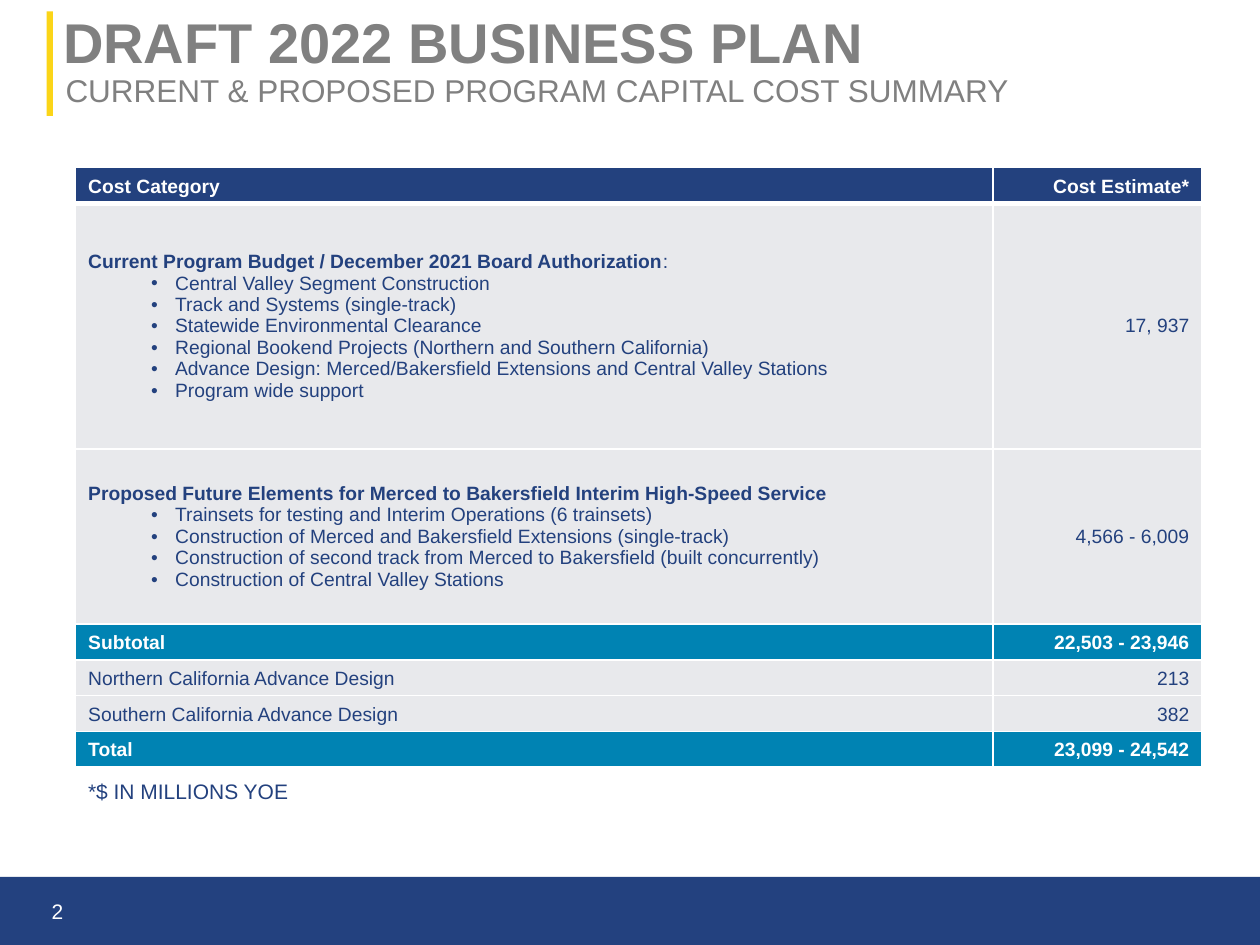
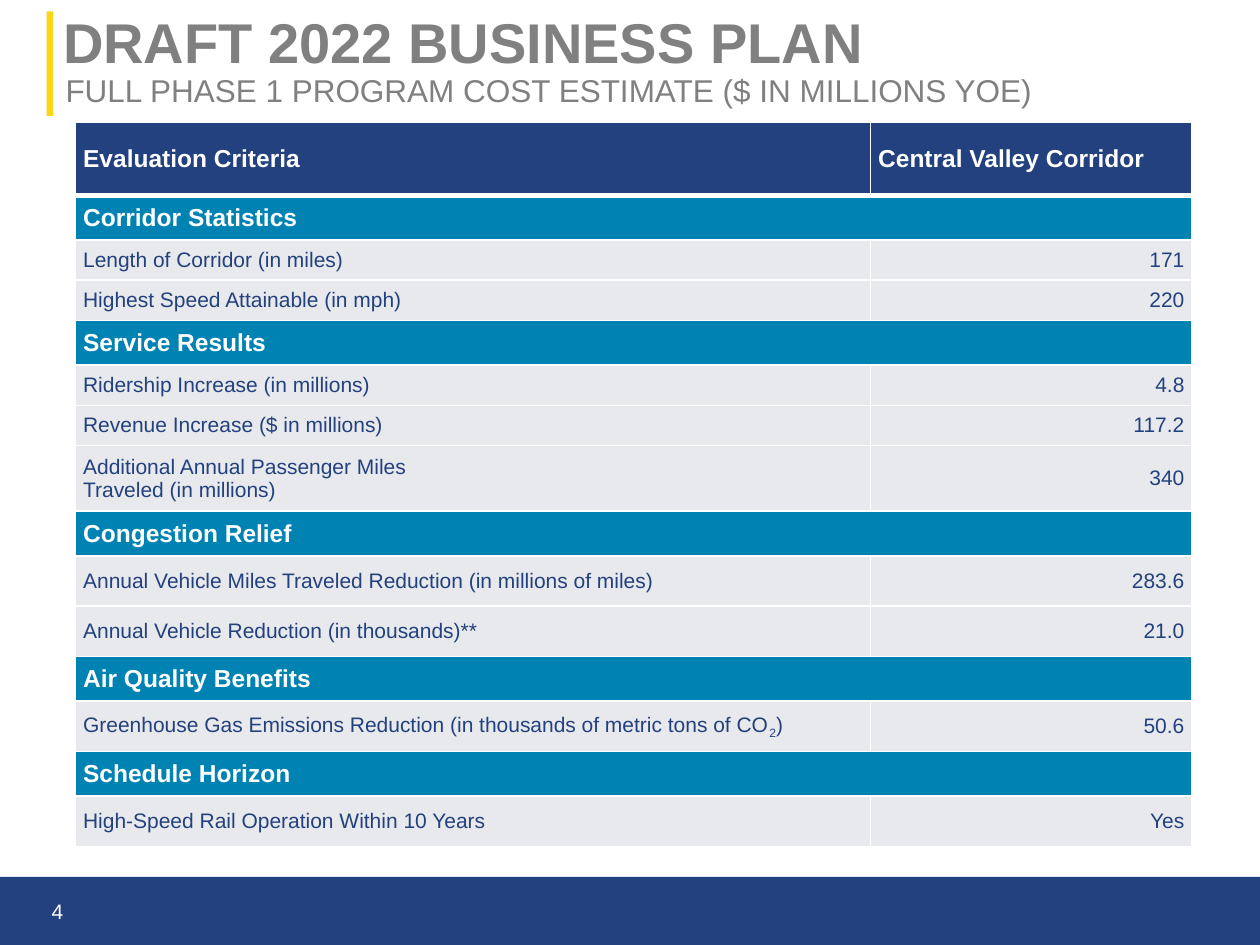
"""Builds the two cost and corridor table slides of the draft 2022 business plan."""
from lxml import etree
from pptx import Presentation
from pptx.dml.color import RGBColor
from pptx.enum.shapes import MSO_SHAPE
from pptx.enum.text import MSO_ANCHOR as ANCHOR, MSO_AUTO_SIZE as AUTO, PP_ALIGN as ALIGN
from pptx.oxml.ns import qn
from pptx.util import Inches, Pt

FONT = "Arial"
WHITE = RGBColor(0xFF, 0xFF, 0xFF)
BAND = RGBColor(0x23, 0x41, 0x7F)
NAVY = RGBColor(0x23, 0x41, 0x7E)
TEAL = RGBColor(0x00, 0x83, 0xB3)
PALE = RGBColor(0xE8, 0xE9, 0xEC)
YELLOW = RGBColor(0xFB, 0xD5, 0x18)
GRAY = RGBColor(0x80, 0x80, 0x80)

HEAD, ACCENT, PLAIN = (NAVY, WHITE, True), (TEAL, WHITE, True), (PALE, NAVY, False)

BUDGET = (
    "Current Program Budget / December 2021 Board Authorization",
    "Central Valley Segment Construction",
    "Track and Systems (single-track)",
    "Statewide Environmental Clearance",
    "Regional Bookend Projects (Northern and Southern California)",
    "Advance Design: Merced/Bakersfield Extensions and Central Valley Stations",
    "Program wide support",
)
FUTURE = (
    "Proposed Future Elements for Merced to Bakersfield Interim High-Speed Service",
    "Trainsets for testing and Interim Operations (6 trainsets)",
    "Construction of Merced and Bakersfield Extensions (single-track)",
    "Construction of second track from Merced to Bakersfield (built concurrently)",
    "Construction of Central Valley Stations",
)
COSTS = [
    (0.28, HEAD, "Cost Category", "Cost Estimate*"),
    (1.95, PLAIN, BUDGET, "17, 937"),
    (1.39, PLAIN, FUTURE, "4,566 - 6,009"),
    (0.28, ACCENT, "Subtotal", "22,503 - 23,946"),
    (0.28, PLAIN, "Northern California Advance Design", "213"),
    (0.28, PLAIN, "Southern California Advance Design", "382"),
    (0.28, ACCENT, "Total", "23,099 - 24,542"),
]
GREENHOUSE = "Greenhouse Gas Emissions Reduction (in thousands of metric tons of CO"
CRITERIA = [
    (0.58, HEAD, "Evaluation Criteria", "Central Valley Corridor"),
    (0.27, ACCENT, "Corridor Statistics", None),
    (0.26, PLAIN, "Length of Corridor (in miles)", "171"),
    (0.26, PLAIN, "Highest Speed Attainable (in mph)", "220"),
    (0.27, ACCENT, "Service Results", None),
    (0.26, PLAIN, "Ridership Increase (in millions)", "4.8"),
    (0.26, PLAIN, "Revenue Increase ($ in millions)", "117.2"),
    (0.4, PLAIN, "Additional Annual Passenger Miles\nTraveled (in millions)", "340"),
    (0.27, ACCENT, "Congestion Relief", None),
    (0.4, PLAIN, "Annual Vehicle Miles Traveled Reduction (in millions of miles)", "283.6"),
    (0.4, PLAIN, "Annual Vehicle Reduction (in thousands)**", "21.0"),
    (0.27, ACCENT, "Air Quality Benefits", None),
    (0.4, PLAIN, GREENHOUSE, "50.6"),
    (0.27, ACCENT, "Schedule Horizon", None),
    (0.4, PLAIN, "High-Speed Rail Operation Within 10 Years", "Yes"),
]


def style_run(r, size, color, bold=False):
    """Set the font of one run."""
    r.font.name, r.font.size, r.font.bold = FONT, Pt(size), bold
    r.font.color.rgb = color


def write(p, text, size, color, bold=False, align=ALIGN.LEFT):
    """Fill a paragraph with text in one style."""
    p.text = text
    p.alignment = align
    for r in p.runs:
        style_run(r, size, color, bold)


def append_run(p, text, size, color, baseline=0):
    """Add a run after the text of a paragraph."""
    r = p.add_run()
    r.text = text
    style_run(r, size, color)
    if baseline:
        r.font._element.set("baseline", str(baseline))


def set_bullet(p, left=0.0, hanging=0.0, char=None):
    """Give a paragraph an indent and a bullet, or no bullet."""
    pPr = p._p.get_or_add_pPr()
    pPr.set("marL", str(Inches(left)))
    pPr.set("indent", str(-Inches(hanging)))
    if char:
        etree.SubElement(pPr, qn("a:buFont")).set("typeface", FONT)
        etree.SubElement(pPr, qn("a:buChar")).set("char", char)
    else:
        etree.SubElement(pPr, qn("a:buNone"))


def place(sp, x, y, w, h):
    """Move and size a shape."""
    sp.left, sp.top, sp.width, sp.height = map(Inches, (x, y, w, h))


def add_bar(s, x, y, w, h, color):
    """Add a plain filled rectangle."""
    sp = s.shapes.add_shape(MSO_SHAPE.RECTANGLE, *map(Inches, (x, y, w, h)))
    sp.shadow.inherit = False
    sp.fill.solid()
    sp.fill.fore_color.rgb = color
    sp.line.fill.background()


def add_text(s, x, y, w, h, text, color, align=ALIGN.LEFT, anchor=ANCHOR.TOP):
    """Add a 12 point text box."""
    tf = s.shapes.add_textbox(*map(Inches, (x, y, w, h))).text_frame
    tf.word_wrap = True
    tf.vertical_anchor = anchor
    write(tf.paragraphs[0], text, 12, color, align=align)


def fill_placeholder(sp, box, text, size, bold, anchor):
    """Place a title or body placeholder and write its line."""
    place(sp, *box)
    tf = sp.text_frame
    tf.word_wrap, tf.auto_size, tf.vertical_anchor = True, AUTO.NONE, anchor
    p = tf.paragraphs[0]
    set_bullet(p)
    write(p, text, size, GRAY, bold)
    p.space_before = Pt(0)


def add_slide(prs, subtitle, number):
    """Add a slide with the shared bands, titles and page number."""
    s = prs.slides.add_slide(prs.slide_layouts[1])
    add_bar(s, 0, 6.96, 10, 0.54, BAND)
    add_bar(s, 0.37, 0.09, 0.05, 0.83, YELLOW)
    title, body = s.placeholders
    fill_placeholder(title, (0.4, 0.15, 9.2, 0.36), "DRAFT 2022 BUSINESS PLAN",
                     32, True, ANCHOR.MIDDLE)
    fill_placeholder(body, (0.42, 0.51, 9.2, 0.46), subtitle, 18, False, ANCHOR.TOP)
    add_text(s, 0.12, 7.03, 0.48, 0.4, number, WHITE, ALIGN.RIGHT, ANCHOR.MIDDLE)
    return s


def set_borders(cell, bottom):
    """Draw white cell borders, with the bottom one of the given width."""
    tcPr = cell._tc.get_or_add_tcPr()
    for side, width in (("L", 1), ("R", 1), ("T", 1), ("B", bottom)):
        ln = etree.SubElement(tcPr, qn(f"a:ln{side}"), w=str(Pt(width)))
        fill = etree.SubElement(ln, qn("a:solidFill"))
        etree.SubElement(fill, qn("a:srgbClr"), val=str(WHITE))


def add_table(s, x, y, widths, rows):
    """Add a bordered table from rows of height, look and cell texts; return it."""
    heights = [row[0] for row in rows]
    box = map(Inches, (x, y, sum(widths), sum(heights)))
    table = s.shapes.add_table(len(rows), len(widths), *box).table
    table.horz_banding = False
    for column, width in zip(table.columns, widths):
        column.width = Inches(width)
    for i, (height, look, *_) in enumerate(rows):
        table.rows[i].height = Inches(height)
        for cell in table.rows[i].cells:
            set_borders(cell, 3 if look is HEAD or (i and rows[i - 1] is None) else 1)
            cell.fill.solid()
            cell.fill.fore_color.rgb = look[0]
    return table


def write_list(tf, lines, size):
    """Write a bold heading followed by bulleted lines."""
    heading, *items = lines
    write(tf.paragraphs[0], heading, size, NAVY, True)
    for item in items:
        p = tf.add_paragraph()
        p.level = 1
        set_bullet(p, 0.69, 0.19, "•")
        write(p, item, size, NAVY)


def add_cost_table(s):
    """Add the capital cost table."""
    table = add_table(s, 0.6, 1.33, (7.28, 1.66), COSTS)
    for i, (_, (_, color, bold), label, value) in enumerate(COSTS):
        name, cost = table.rows[i].cells
        is_list = isinstance(label, tuple)
        name.vertical_anchor = cost.vertical_anchor = ANCHOR.MIDDLE if is_list else ANCHOR.BOTTOM
        if is_list:
            write_list(name.text_frame, label, 11)
        else:
            write(name.text_frame.paragraphs[0], label, 11, color, bold)
        write(cost.text_frame.paragraphs[0], value, 11, color, bold, ALIGN.RIGHT)
    append_run(table.cell(1, 0).text_frame.paragraphs[0], ":", 11, NAVY)


def add_criteria_table(s):
    """Add the corridor evaluation table."""
    table = add_table(s, 0.6, 0.97, (6.31, 2.55), CRITERIA)
    for i, (_, look, *texts) in enumerate(CRITERIA):
        _, color, bold = look
        if texts[1] is None:
            table.cell(i, 0).merge(table.cell(i, 1))
        for j, text in enumerate(texts):
            if text is None:
                continue
            cell = table.cell(i, j)
            cell.vertical_anchor = ANCHOR.MIDDLE
            cell.margin_left = cell.margin_right = Inches(0.06)
            cell.margin_top = cell.margin_bottom = Inches(0.06)
            p = cell.text_frame.paragraphs[0]
            align = ALIGN.RIGHT if j and look is PLAIN else ALIGN.LEFT
            write(p, text, 14 if bold else 12, color, bold, align)
            p.space_after = Pt(4.5 if bold else 8)
            if text == GREENHOUSE:
                append_run(p, "2", 12, color, -25000)
                append_run(p, ")", 12, color)


def main():
    """Build and save the presentation."""
    prs = Presentation()
    prs.slide_width, prs.slide_height = Inches(10), Inches(7.5)

    s = add_slide(prs, "CURRENT & PROPOSED PROGRAM CAPITAL COST SUMMARY", "2")
    add_cost_table(s)
    add_text(s, 0.6, 6.13, 4.31, 0.3, "*$ IN MILLIONS YOE", NAVY)

    s = add_slide(prs, "FULL PHASE 1 PROGRAM COST ESTIMATE ($ IN MILLIONS YOE)", "4")
    add_criteria_table(s)

    prs.save("out.pptx")


if __name__ == "__main__":
    main()
